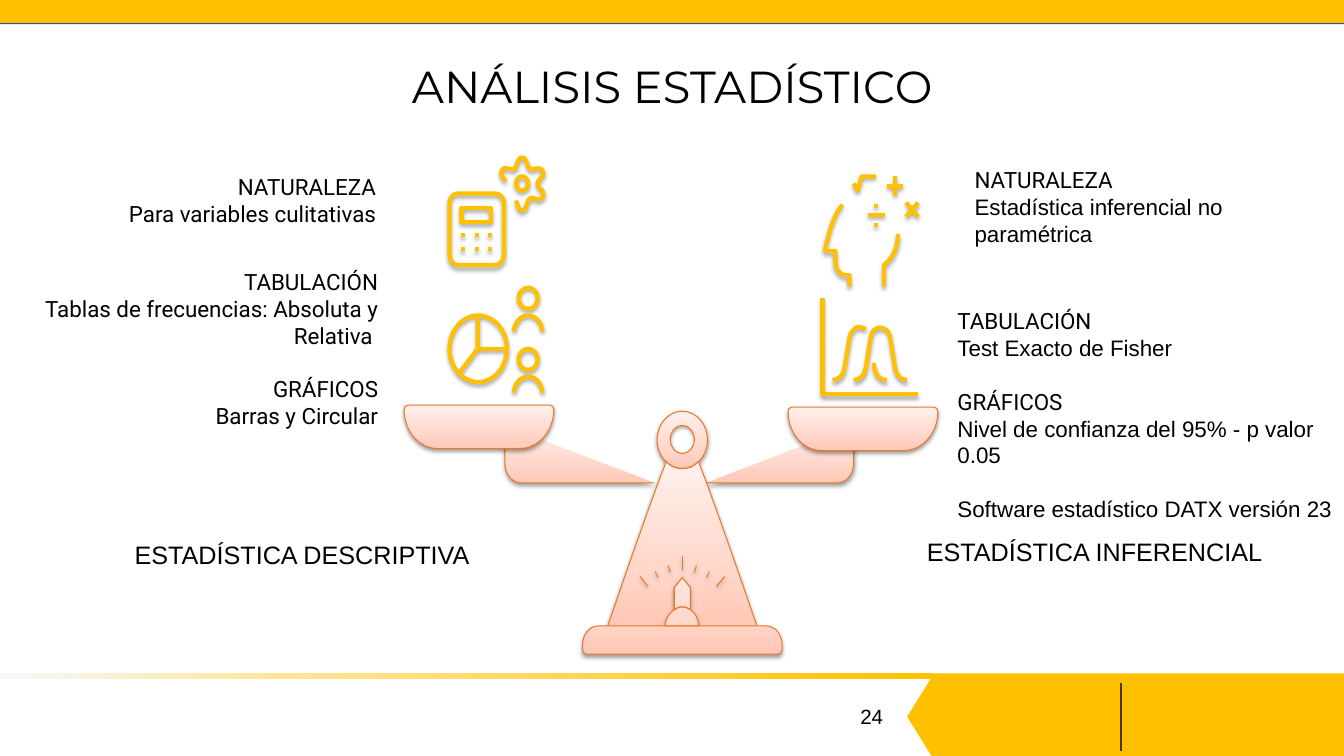
import pptx
import pptx.dml.color
import pptx.enum.shapes
import pptx.enum.text
import pptx.oxml.ns
import pptx.util
from lxml import etree

Cm, Pt = pptx.util.Cm, pptx.util.Pt
RGB = pptx.dml.color.RGBColor
SHAPE = pptx.enum.shapes.MSO_SHAPE
ALIGN = pptx.enum.text.PP_ALIGN
ANCHOR = pptx.enum.text.MSO_ANCHOR
qn = pptx.oxml.ns.qn

GOLD = RGB(0xFF, 0xC0, 0x00)
BLUE = RGB(0x2F, 0x54, 0x96)
BROWN = RGB(0x48, 0x37, 0x00)
ORANGE = RGB(0xEC, 0x79, 0x2B)
BLACK = RGB(0, 0, 0)
PEACH = [(0, RGB(0xFF, 0xC7, 0xB6)), (35, RGB(0xFF, 0xD7, 0xCB)), (100, RGB(0xFF, 0xF0, 0xEB))]
FADE = [(0, RGB(0xF6, 0xF9, 0xFC)), (30, RGB(0xFF, 0xE5, 0x99)), (100, GOLD)]

UNIT = Cm(0.0254)  # drawing unit of the outlines
BLANK_LINE = 19


def paint_gradient(sp, stops, angle):
    sp.fill.gradient()
    sp.fill.gradient_angle = angle
    gs_list = sp._element.spPr.find(".//" + qn("a:gsLst"))
    for old in list(gs_list):
        gs_list.remove(old)
    for position, color in stops:
        gs = etree.SubElement(gs_list, qn("a:gs"), pos=str(position * 1000))
        etree.SubElement(gs, qn("a:srgbClr"), val=str(color))


def add_shadow(sp, opacity, distance):
    sp.shadow.inherit = False
    effects = sp._element.spPr.find(qn("a:effectLst"))
    shadow = etree.SubElement(effects, qn("a:outerShdw"), blurRad=str(Pt(3.1)),
                              dist=str(Pt(distance)), dir="5400000", rotWithShape="0")
    color = etree.SubElement(shadow, qn("a:srgbClr"), val=str(BLACK))
    etree.SubElement(color, qn("a:alpha"), val=str(opacity * 1000))


def add_block(s, kind, left, top, width, height, color=GOLD):
    sp = s.shapes.add_shape(kind, Cm(left), Cm(top), Cm(width), Cm(height))
    sp.shadow.inherit = False
    sp.fill.solid()
    sp.fill.fore_color.rgb = color
    sp.line.fill.background()
    return sp


def add_run(p, text, font, size):
    r = p.add_run()
    r.text = text
    r.font.name, r.font.size, r.font.color.rgb = font, Pt(size), BLACK


def add_text(s, left, top, width, height, lines, align, size=16):
    """Each line is (text, font, space before in points)."""
    tf = s.shapes.add_textbox(Cm(left), Cm(top), Cm(width), Cm(height)).text_frame
    tf.word_wrap = True
    tf.margin_left = tf.margin_right = tf.margin_top = tf.margin_bottom = 0
    for i, (text, font, gap) in enumerate(lines):
        p = tf.add_paragraph() if i else tf.paragraphs[0]
        p.alignment = align
        if gap:
            p.space_before = Pt(gap)
        add_run(p, text, font, size)
    return tf


def circle(cx, cy, rx, ry):
    """Outline of an ellipse as four curves."""
    kx, ky = 0.55 * rx, 0.55 * ry
    return (f" M {cx - rx} {cy} C {cx - rx} {cy - ky} {cx - kx} {cy - ry} {cx} {cy - ry}"
            f" {cx + kx} {cy - ry} {cx + rx} {cy - ky} {cx + rx} {cy}"
            f" {cx + rx} {cy + ky} {cx + kx} {cy + ry} {cx} {cy + ry}"
            f" {cx - kx} {cy + ry} {cx - rx} {cy + ky} {cx - rx} {cy} Z ")


def dot(x, y):
    return f" M {x - 2} {y} L {x + 2} {y} "


def read_contour(contour):
    """Points of one contour, and for each after the first its command, L or C."""
    command, commands, numbers = "L", [], []
    for token in contour.replace("Z", "").split():
        if token in "LC":
            command = token
        else:
            numbers.append(float(token))
            if len(numbers) % 2 == 0 and len(numbers) > 2:
                commands.append(command)
    return list(zip(numbers[::2], numbers[1::2])), commands


def bend_lines(sp, commands):
    """Join each three line segments marked C into one cubic curve."""
    segments = list(sp._element.spPr.iter(qn("a:lnTo")))
    curve = None
    for segment, command in zip(segments, commands):
        if command == "L":
            continue
        if curve is None:
            curve = etree.Element(qn("a:cubicBezTo"))
            segment.addprevious(curve)
        curve.append(segment[0])
        segment.getparent().remove(segment)
        if len(curve) == 3:
            curve = None


def add_outline(s, outline, dx=0, dy=0):
    builder, all_commands = None, []
    for contour in outline.split("M")[1:]:
        points, commands = read_contour(contour)
        points = [((x + dx) * UNIT, (y + dy) * UNIT) for x, y in points]
        all_commands += commands
        if builder is None:
            builder = s.shapes.build_freeform(*points[0], scale=1.0)
        else:
            builder.move_to(*points[0])
        builder.add_line_segments(points[1:], close="Z" in contour)
    sp = builder.convert_to_shape()
    bend_lines(sp, all_commands)
    return sp


def add_scale_part(s, outline, dx=0, dy=0):
    sp = add_outline(s, outline, dx, dy)
    paint_gradient(sp, PEACH, 90)
    sp.line.color.rgb, sp.line.width = ORANGE, Pt(0.75)
    add_shadow(sp, 38, 1.6)


def add_icon(s, outline):
    sp = add_outline(s, outline)
    sp.fill.background()
    sp.line.color.rgb, sp.line.width = GOLD, Pt(3)
    add_shadow(sp, 35, 1.8)


def add_frame(s):
    arrow = add_block(s, SHAPE.PENTAGON, 22.86, 17.07, 11.01, 1.98)
    arrow.rotation = 180
    arrow.adjustments[0] = 0.311
    add_block(s, SHAPE.RECTANGLE, 23.44, 16.97, 10.43, 0.13)
    add_block(s, SHAPE.RECTANGLE, 0, 0, 33.87, 0.61, BLUE)
    add_block(s, SHAPE.RECTANGLE, 0, 0, 33.87, 0.58)
    divider = s.shapes.add_connector(pptx.enum.shapes.MSO_CONNECTOR.STRAIGHT,
                                     Cm(28.24), Cm(17.2), Cm(28.24), Cm(18.92))
    divider.line.color.rgb, divider.line.width = BROWN, Pt(1.5)
    etree.SubElement(divider._element.spPr, qn("a:effectLst"))
    paint_gradient(add_block(s, SHAPE.RECTANGLE, 0, 16.97, 23.44, 0.13), FADE, 0)


def add_title(s, text):
    sp = s.shapes.title
    sp.left, sp.top, sp.width, sp.height = Cm(2.34), Cm(0.61), Cm(29.21), Cm(3.28)
    sp.text_frame.vertical_anchor = ANCHOR.MIDDLE
    p = sp.text_frame.paragraphs[0]
    p.alignment, p.line_spacing = ALIGN.CENTER, 0.9
    add_run(p, text, "Montserrat", 32)


def add_balance(s):
    # Beam, ring, column and base with its dial
    add_scale_part(s, "M 847 424 L 847 460 C 847 470 840 479 831 479 L 701 479"
                      "M 649 479 L 517 479 C 508 479 501 470 501 460 L 501 424")
    add_scale_part(s, circle(677, 436.5, 25, 28.5) + circle(677, 436, 12, 14))
    add_scale_part(s, "M 661 458 C 665 463 671 465 677 465 683 465 689 463 693 458"
                      " 710 501 751 621 751 621 L 603 621 C 603 621 644 501 661 458 Z")
    ticks = ((677, 552, 677, 566), (719, 572, 711, 582), (643, 582, 635, 572), (691, 561, 689, 568),
             (650, 567, 653, 573), (704, 567, 701, 573), (663, 561, 665, 568))
    add_scale_part(s, "M 760 621 C 769 621 776 629 776 640 L 776 645 C 776 647 774 649 772 649"
                      " L 582 649 C 580 649 578 647 578 645 L 578 640 C 578 629 585 621 594 621 Z"
                      "M 669 605 L 669 583 677 573 685 583 685 605 C 680 601 674 601 669 605 Z"
                      "M 660 621 C 660 614 664 608 669 605 674 601 680 601 685 605"
                      " 690 608 693 614 693 621 Z"
                   + "".join("M {} {} L {} {} ".format(*tick) for tick in ticks))
    # Pans
    for dx, dy in ((381, 2), (0, 0)):
        add_scale_part(s, "M 401 406.5 C 401 404 402 402 405 402 L 546 402 C 548 402 549.5 404 549.5 406.5"
                          " 549.5 428 534 445 516 445 L 434 445 C 416 445 401 428 401 406.5 Z", dx, dy)


def add_icons(s):
    # Calculator and gear
    keys = "".join(dot(x, y) for x in (459, 473, 486) for y in (233, 247))
    add_icon(s, "M 502 180 L 498 175 C 496 172 498 165 503 167 L 508 168 C 510 169 512 168 512 165"
                " L 514 160 C 515 155 521 155 522 160 L 524 165 C 524 167 527 169 528 168"
                " L 533 167 C 538 166 541 172 538 175 L 534 180 C 533 181 533 183 534 185"
                " L 538 189 C 541 193 538 199 533 198 L 528 196 C 527 196 524 197 524 199"
                " L 522 205 C 521 210 515 210 514 205 L 512 199"
                "M 500 253 C 500 258 496 263 491 263 L 454 263 C 450 263 446 258 446 253"
                " L 446 201 C 446 196 450 192 454 192 L 491 192 C 496 192 500 196 500 201 Z"
                "M 487 206 L 458 206 458 220 487 220 Z" + keys + circle(518, 182, 6, 7))
    # Head with arithmetic signs
    add_icon(s, "M 888 175 L 888 194 M 880 185 L 896 185 M 911 215 L 899 201 M 911 201 L 899 215"
                "M 861 213 L 878 213" + dot(869, 204) + dot(869, 223) +
                "M 847 182 L 851 189 855 175 869 175"
                "M 843 284 L 843 273 839 273 C 834 273 829 267 829 261 L 829 249 821 249"
                " C 819 249 818 248 819 246 823 230 827 213 836 203"
                "M 877 284 L 877 263 C 886 256 891 245 891 232")
    # Pie chart and people
    people = "".join(circle(524, y, 9.5, 10.5) + f"M 510 {y + 33} C 510 {y + 25} 516 {y + 17} 524 {y + 17}"
                     f" 532 {y + 17} 538 {y + 25} 538 {y + 33}" for y in (296, 356.5))
    add_icon(s, people + circle(474.5, 346, 28.5, 33) + "M 455 371 L 474 346 474 313 M 503 346 L 474 346")
    # Distribution curves
    add_icon(s, "M 911 391 L 816 391 816 296 M 867 360 C 867 365 869 377 880 377"
                "M 859 327 C 856 324 852 324 849 325 846 327 844 330 843 334 L 838 365"
                " C 837 372 832 377 826 377"
                "M 847 377 C 853 377 858 372 859 365 L 864 334 C 865 328 869 325 873 325"
                " 878 325 882 328 883 334 L 888 365 C 889 372 894 377 900 377")


def main():
    prs = pptx.Presentation()
    prs.slide_width, prs.slide_height = Cm(33.87), Cm(19.05)
    s = prs.slides.add_slide(prs.slide_layouts[5])
    add_frame(s)
    add_title(s, "ANÁLISIS ESTADÍSTICO")
    number = add_text(s, 21.21, 17.35, 1.52, 1.42, [("24", "Arial", 0)], ALIGN.CENTER, 14.7)
    number.vertical_anchor = ANCHOR.MIDDLE
    add_balance(s)
    add_icons(s)

    # Descriptive side
    add_text(s, 0.74, 4.37, 8.74, 1.37, [("NATURALEZA", "Roboto", 0),
             ("Para variables culitativas", "Roboto", 0)], ALIGN.RIGHT)
    add_text(s, 0, 6.76, 9.53, 4.11, [("TABULACIÓN", "Roboto", 0),
             ("Tablas de frecuencias: Absoluta y Relativa ", "Roboto", 0),
             ("GRÁFICOS", "Roboto", BLANK_LINE), ("Barras y Circular", "Roboto", 0)], ALIGN.RIGHT)
    add_text(s, 1.52, 13.59, 12.19, 0.76, [("ESTADÍSTICA DESCRIPTIVA", "Arial", 0)], ALIGN.CENTER, 18)

    # Inferential side
    add_text(s, 24.56, 4.19, 8.74, 2.06, [("NATURALEZA", "Roboto", 0),
             ("Estadística inferencial no paramétrica", "Arial", 0)], ALIGN.LEFT)
    add_text(s, 24.13, 7.75, 9.74, 6.07, [("TABULACIÓN", "Roboto", 0), ("Test Exacto de Fisher", "Arial", 0),
             ("GRÁFICOS", "Roboto", BLANK_LINE), ("Nivel de confianza del 95% - p valor 0.05", "Arial", 0),
             ("Software estadístico DATX versión 23", "Arial", BLANK_LINE)], ALIGN.LEFT)
    add_text(s, 21.77, 13.51, 11.63, 0.76, [("ESTADÍSTICA INFERENCIAL", "Arial", 0)], ALIGN.CENTER, 18)
    prs.save("out.pptx")


if __name__ == "__main__":
    main()
